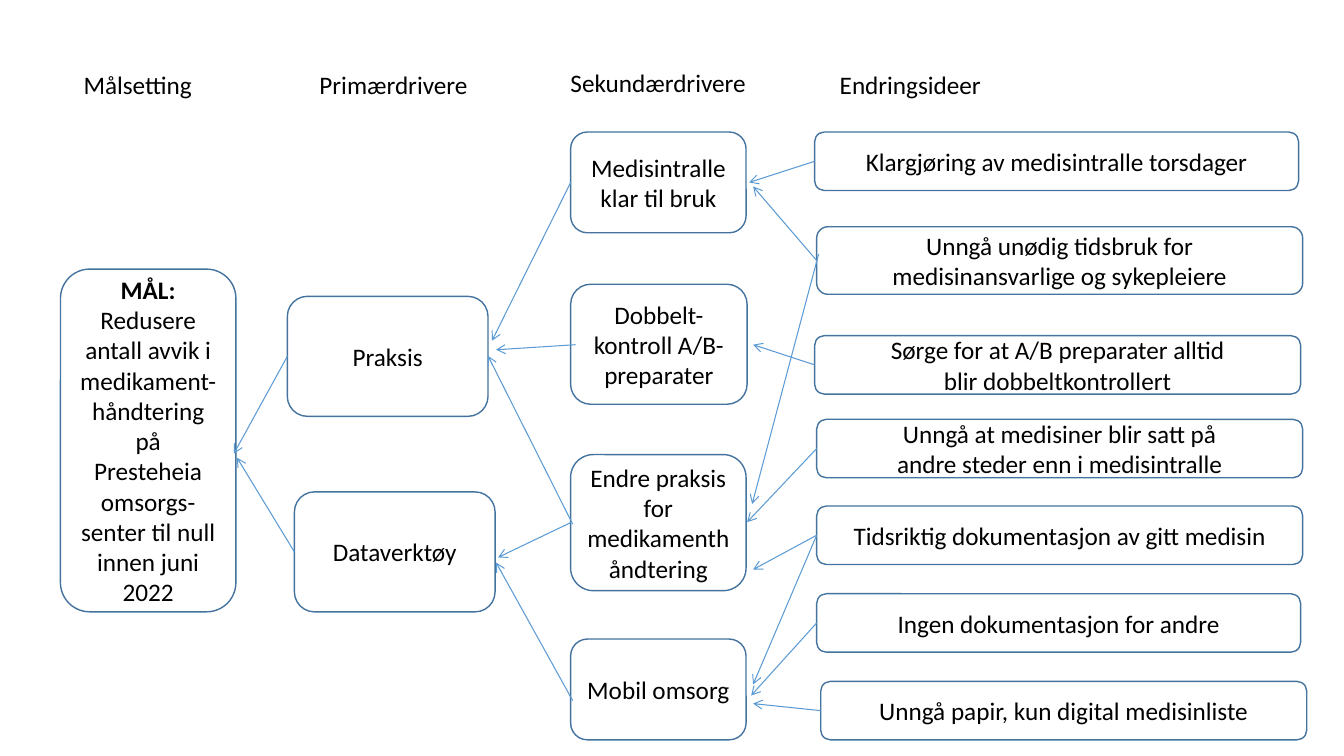
from lxml import etree
from pptx import Presentation
from pptx.dml.color import RGBColor
from pptx.enum.shapes import MSO_CONNECTOR, MSO_SHAPE
from pptx.enum.text import MSO_ANCHOR, MSO_AUTO_SIZE, PP_ALIGN
from pptx.oxml.ns import qn
from pptx.util import Inches, Pt

ROUNDED = MSO_SHAPE.ROUNDED_RECTANGLE
STRAIGHT = MSO_CONNECTOR.STRAIGHT
CENTER, LEFT = PP_ALIGN.CENTER, PP_ALIGN.LEFT
MIDDLE = MSO_ANCHOR.MIDDLE
FIT_SHAPE = MSO_AUTO_SIZE.SHAPE_TO_FIT_TEXT
LEFT_SITE = 1

COLUMNS, ROWS = 13.33, 7.5
COLORS = {"box": "FFFFFF", "outline": "43739E", "arrow": "5B9BD5", "text": "000000"}

# Places are column, row, columns wide, rows high
HEADINGS = [
    ("Målsetting", (0.73, 0.64, 1.29, 0.4)),
    ("Primærdrivere", (3.07, 0.64, 1.68, 0.4)),
    ("Sekundærdrivere", (5.56, 0.62, 1.96, 0.4)),
    ("Endringsideer", (8.23, 0.64, 1.62, 0.4)),
]

GOAL = ["MÅL:", "Redusere antall avvik i medikament-håndtering på Presteheia "
        "omsorgs-senter til null innen juni 2022"]

DRIVERS = {
    "praksis": (["Praksis"], (2.85, 2.94, 1.99, 1.19)),
    "dataverktøy": (["Dataverktøy"], (2.92, 4.88, 1.99, 1.19)),
    "medisintralle": (["Medisintralle klar til bruk"], (5.66, 1.31, 1.74, 1)),
    "dobbeltkontroll": (["Dobbelt-kontroll A/B- preparater"], (5.66, 2.82, 1.75, 1.19)),
    "endre praksis": (["Endre praksis for medikamenthåndtering"], (5.66, 4.51, 1.74, 1.35)),
    "mobil omsorg": (["Mobil omsorg"], (5.66, 6.34, 1.74, 1)),
}

IDEAS = {
    "klargjøring": (["Klargjøring av medisintralle torsdager"], (8.08, 1.31, 4.8, 0.58)),
    "tidsbruk": (["Unngå unødig tidsbruk for", "medisinansvarlige og sykepleiere"],
                 (8.1, 2.25, 4.82, 0.67)),
    "preparater": (["Sørge for at A/B preparater alltid", "blir dobbeltkontrollert"],
                   (8.08, 3.33, 4.82, 0.58)),
    "andre steder": (["Unngå at medisiner blir satt på", "andre steder enn i medisintralle"],
                     (8.1, 4.16, 4.82, 0.58)),
    "tidsriktig": (["Tidsriktig dokumentasjon av gitt medisin"], (8.1, 5.02, 4.82, 0.58)),
    "for andre": (["Ingen dokumentasjon for andre"], (8.1, 5.89, 4.8, 0.58)),
    "papir": (["Unngå papir, kun digital medisinliste"], (8.14, 6.76, 4.82, 0.58)),
}

# Source box and the column and row of the arrow tip
GLUED_ARROWS = [
    ("klargjøring", (7.43, 1.81)),
    ("tidsbruk", (7.47, 1.85)),
    ("preparater", (7.47, 3.42)),
    ("andre steder", (7.41, 5.18)),
    ("tidsriktig", (7.47, 5.65)),
    ("tidsriktig", (7.47, 6.79)),
    ("for andre", (7.45, 6.9)),
    ("papir", (7.47, 6.98)),
    ("medisintralle", (4.88, 3.38)),
    ("endre praksis", (4.94, 5.53)),
    ("praksis", (2.32, 4.5)),
    ("dataverktøy", (2.35, 4.54)),
]

# Start and tip of the arrows that begin beside a box's middle
FREE_ARROWS = [
    ((8.12, 2.52), (7.46, 5)),
    ((5.68, 6.95), (4.92, 5.58)),
    ((5.71, 3.42), (4.92, 3.47)),
    ((5.68, 5.2), (4.84, 3.53)),
]


class DriverDiagram:
    font, size = "Calibri", Pt(18)
    outline_width, arrow_width = Pt(1), Pt(0.75)

    def __init__(self, presentation):
        self.column = presentation.slide_width / COLUMNS
        self.row = presentation.slide_height / ROWS
        blank = presentation.slide_layouts[6]
        self.shapes = presentation.slides.add_slide(blank).shapes

    def at(self, column, row):
        return round(column * self.column), round(row * self.row)

    def color(self, part):
        return RGBColor.from_string(COLORS[part])

    def add_lines(self, frame, lines, align, bold_first=False):
        for index, line in enumerate(lines):
            paragraph = frame.paragraphs[0] if index == 0 else frame.add_paragraph()
            paragraph.alignment = align
            run = paragraph.add_run()
            run.text = line
            run.font.name, run.font.size = self.font, self.size
            run.font.bold = bold_first and index == 0
            run.font.color.rgb = self.color("text")

    def heading(self, title, place):
        label = self.shapes.add_textbox(*self.at(*place[:2]), *self.at(*place[2:]))
        label.text_frame.word_wrap = False
        label.text_frame.auto_size = FIT_SHAPE
        self.add_lines(label.text_frame, [title], LEFT)

    def box(self, lines, place, bold_first=False):
        box = self.shapes.add_shape(ROUNDED, *self.at(*place[:2]), *self.at(*place[2:]))
        box.shadow.inherit = False
        box.fill.solid()
        box.fill.fore_color.rgb = self.color("box")
        box.line.color.rgb = self.color("outline")
        box.line.width = self.outline_width
        box.text_frame.word_wrap = True
        box.text_frame.vertical_anchor = MIDDLE
        self.add_lines(box.text_frame, lines, CENTER, bold_first)
        return box

    def arrow(self, start, tip, source=None):
        """Draw an arrow to tip, glued to the left side of source if given."""
        arrow = self.shapes.add_connector(STRAIGHT, *self.at(*start), *self.at(*tip))
        if source is not None:
            arrow.begin_connect(source, LEFT_SITE)
        arrow.line.color.rgb = self.color("arrow")
        arrow.line.width = self.arrow_width
        properties = arrow.element.spPr
        etree.SubElement(properties.find(qn("a:ln")), qn("a:tailEnd"), type="arrow")
        etree.SubElement(properties, qn("a:effectLst"))


def main():
    presentation = Presentation()
    presentation.slide_width = Inches(COLUMNS)
    presentation.slide_height = Inches(ROWS)
    diagram = DriverDiagram(presentation)

    diagram.box(GOAL, (0.6, 2.67, 1.74, 3.4), bold_first=True)
    contents = {**DRIVERS, **IDEAS}
    boxes = {key: diagram.box(*content) for key, content in contents.items()}

    for key, tip in GLUED_ARROWS:
        left, top, _, height = contents[key][1]
        diagram.arrow((left, top + height / 2), tip, boxes[key])
    for start, tip in FREE_ARROWS:
        diagram.arrow(start, tip)

    for title, place in HEADINGS:
        diagram.heading(title, place)

    presentation.save("out.pptx")


if __name__ == "__main__":
    main()
